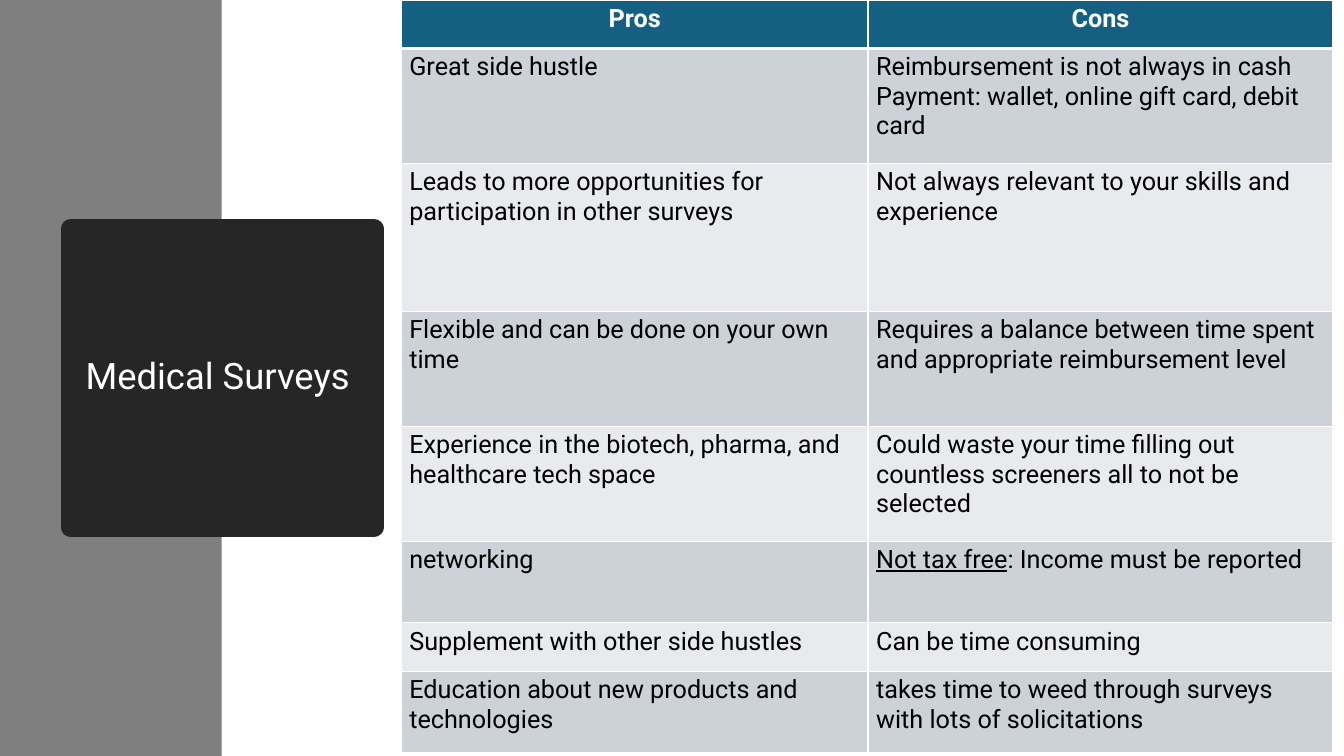
from lxml import etree
from pptx import Presentation
from pptx.dml.color import RGBColor
from pptx.enum import shapes, text
from pptx.oxml.ns import qn
from pptx.util import Inches, Pt

FONT = "Roboto"
WHITE = RGBColor(0xFF, 0xFF, 0xFF)
BLACK = RGBColor(0x00, 0x00, 0x00)
GREY = RGBColor(0x7F, 0x7F, 0x7F)
CHARCOAL = RGBColor(0x26, 0x26, 0x26)
HEADER = RGBColor(0x15, 0x60, 0x82)
BANDS = [RGBColor(0xE8, 0xEA, 0xED), RGBColor(0xCC, 0xD2, 0xD8)]


def add_text(p, words, size=18, color=BLACK, bold=False, underline=False):
    r = p.add_run()
    r.text = words
    f = r.font
    f.name, f.size, f.bold, f.underline = FONT, Pt(size), bold, underline
    f.color.rgb = color


def add_border(cell, side, width):
    ln = etree.SubElement(cell._tc.get_or_add_tcPr(), qn(f"a:ln{side}"), w=str(Pt(width)))
    fill = etree.SubElement(ln, qn("a:solidFill"))
    etree.SubElement(fill, qn("a:srgbClr"), val=str(WHITE))


prs = Presentation()
prs.slide_width, prs.slide_height = Inches(13.33), Inches(7.5)
s = prs.slides.add_slide(prs.slide_layouts[5])

# Side band, behind the title
band = s.shapes.add_shape(shapes.MSO_SHAPE.RECTANGLE, 0, 0, Inches(2.2), Inches(7.5))
band.shadow.inherit = False
band.fill.solid()
band.fill.fore_color.rgb = GREY
band.line.fill.background()
title = s.shapes.title
title.element.addprevious(band.element)

# Round title
title.left, title.top = Inches(0.7), Inches(2.27)
title.width, title.height = Inches(3.01), Inches(2.96)
geom = etree.SubElement(title.element.spPr, qn("a:prstGeom"), prst="ellipse")
etree.SubElement(geom, qn("a:avLst"))
title.fill.solid()
title.fill.fore_color.rgb = CHARCOAL
title.line.color.rgb = CHARCOAL
title.line.width = Pt(13.75)
tf = title.text_frame
tf.word_wrap = True
tf.auto_size = text.MSO_AUTO_SIZE.NONE
tf.vertical_anchor = text.MSO_ANCHOR.MIDDLE
p = tf.paragraphs[0]
p.alignment = text.PP_ALIGN.CENTER
p.line_spacing = 0.9
p.space_after = Pt(6)
add_text(p, "Medical Surveys ", size=26, color=WHITE)

# Pros and cons: a line break starts a new paragraph
rows = [
    (0.48, "Pros", "Cons"),
    (1.14, "Great side hustle",
     "Reimbursement is not always in cash\n"
     "Payment: wallet, online gift card, debit card"),
    (1.47, "Leads to more opportunities for participation in other surveys",
     "Not always relevant to your skills and experience"),
    (1.14, "Flexible and can be done on your own time",
     "Requires a balance between time spent and appropriate reimbursement level"),
    (1.14, "Experience in the biotech, pharma, and healthcare tech space",
     "Could waste your time filling out countless screeners all to not be selected"),
    (0.81, "networking", "Not tax free: Income must be reported"),
    (0.48, "Supplement with other side hustles", "Can be time consuming"),
    (0.81, "Education about new products and technologies",
     "takes time to weed through surveys with lots of solicitations"),
]
UNDERLINED = "Not tax free"

table = s.shapes.add_table(len(rows), 2, Inches(3.98), 0, Inches(9.24), Inches(7.47)).table
table.columns[0].width, table.columns[1].width = Inches(4.63), Inches(4.61)
for i, (height, *entries) in enumerate(rows):
    table.rows[i].height = Inches(height)
    head = i == 0
    for j, entry in enumerate(entries):
        cell = table.cell(i, j)
        cell.margin_left = cell.margin_right = Inches(0.08)
        cell.margin_top = cell.margin_bottom = Inches(0.04)
        for side in "LRTB":
            thick = (head and side == "B") or (i == 1 and side == "T")
            add_border(cell, side, 3 if thick else 1)
        cell.fill.solid()
        cell.fill.fore_color.rgb = HEADER if head else BANDS[i % 2]
        for k, line in enumerate(entry.split("\n")):
            p = cell.text_frame.add_paragraph() if k else cell.text_frame.paragraphs[0]
            p.alignment = text.PP_ALIGN.CENTER if head else text.PP_ALIGN.LEFT
            if line.startswith(UNDERLINED):
                add_text(p, UNDERLINED, underline=True)
                line = line.removeprefix(UNDERLINED)
            add_text(p, line, color=WHITE if head else BLACK, bold=head)

prs.save("out.pptx")
